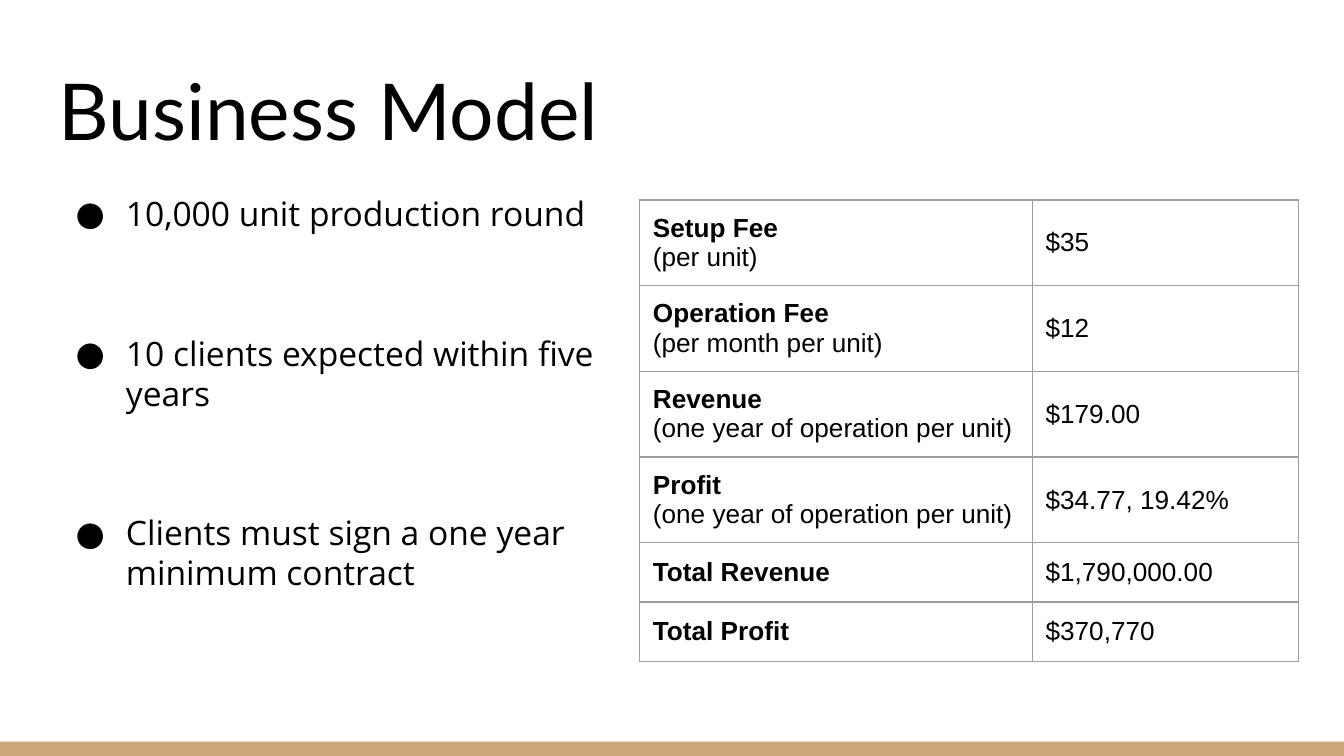
from lxml import etree
from pptx import Presentation
from pptx.dml.color import RGBColor
from pptx.enum.shapes import MSO_SHAPE
from pptx.enum.text import MSO_ANCHOR, MSO_AUTO_SIZE, PP_ALIGN
from pptx.oxml.ns import qn
from pptx.util import Cm, Pt

RECTANGLE = MSO_SHAPE.RECTANGLE
BOTTOM, MIDDLE, TOP = MSO_ANCHOR.BOTTOM, MSO_ANCHOR.MIDDLE, MSO_ANCHOR.TOP
NO_FIT = MSO_AUTO_SIZE.NONE
LEFT = PP_ALIGN.LEFT

BLACK = RGBColor(0x00, 0x00, 0x00)
WHITE = RGBColor(0xFF, 0xFF, 0xFF)
TAN = RGBColor(0xCC, 0xA6, 0x77)
GREY = RGBColor(0x9E, 0x9E, 0x9E)

SLIDE_WIDTH, SLIDE_HEIGHT = Cm(25.4), Cm(14.29)
BAR_HEIGHT = Cm(0.27)
INSET = Cm(0.25)
COLUMN_WIDTHS = Cm(7.42), Cm(5.03)
LINE_HEIGHT = Pt(21.4)
BULLET_GAP = Pt(53.5)

POINTS = [
    "10,000 unit production round",
    "10 clients expected within five years",
    "Clients must sign a one year minimum contract",
]
FIGURES = [
    (["Setup Fee", "(per unit)"], "$35"),
    (["Operation Fee", "(per month per unit)"], "$12"),
    (["Revenue", "(one year of operation per unit)"], "$179.00"),
    (["Profit", "(one year of operation per unit)"], "$34.77, 19.42%"),
    (["Total Revenue"], "$1,790,000.00"),
    (["Total Profit"], "$370,770"),
]


def add_span(para, text, font_name, size, bold=False):
    span = para.add_run()
    span.text = text
    font = span.font
    font.name, font.size, font.bold = font_name, Pt(size), bold
    font.color.rgb = BLACK


def place(box, left, top, width, height, anchor):
    """Move a placeholder and set up its text frame."""
    box.left, box.top, box.width, box.height = left, top, width, height
    frame = box.text_frame
    frame.word_wrap = True
    frame.auto_size = NO_FIT
    frame.vertical_anchor = anchor
    frame.margin_left = frame.margin_right = INSET
    frame.margin_top = frame.margin_bottom = INSET
    return frame


def add_bar(page):
    bar = page.shapes.add_shape(
        RECTANGLE, 0, SLIDE_HEIGHT - BAR_HEIGHT, SLIDE_WIDTH, BAR_HEIGHT)
    bar.shadow.inherit = False
    bar.fill.solid()
    bar.fill.fore_color.rgb = TAN
    bar.line.fill.background()


def fill_title(page):
    frame = place(page.shapes.title, Cm(0.86), Cm(0.89), Cm(23.67), Cm(2.31), BOTTOM)
    para = frame.paragraphs[0]
    para.alignment = LEFT
    add_span(para, "Business Model", "Lato", 42)


def set_bullet(para):
    properties = para._p.get_or_add_pPr()
    properties.set("marL", str(Cm(1.27)))
    properties.set("indent", str(-Cm(0.95)))
    color = etree.SubElement(properties, qn("a:buClr"))
    etree.SubElement(color, qn("a:srgbClr"), val=str(BLACK))
    etree.SubElement(properties, qn("a:buFont"), typeface="Open Sans")
    etree.SubElement(properties, qn("a:buChar"), char="●")


def fill_points(page):
    frame = place(page.placeholders[1], Cm(0.86), Cm(3.4), Cm(11.23), Cm(9.32), TOP)
    for index, text in enumerate(POINTS):
        para = frame.add_paragraph() if index else frame.paragraphs[0]
        set_bullet(para)
        para.alignment = LEFT
        para.line_spacing = LINE_HEIGHT
        para.space_before = BULLET_GAP if index else Pt(0)
        add_span(para, text, "Open Sans", 18)


def set_borders(cell):
    properties = cell._tc.get_or_add_tcPr()
    for position, side in enumerate(("a:lnL", "a:lnR", "a:lnT", "a:lnB")):
        line = etree.Element(qn(side), w=str(Pt(0.75)))
        fill = etree.SubElement(line, qn("a:solidFill"))
        etree.SubElement(fill, qn("a:srgbClr"), val=str(GREY))
        properties.insert(position, line)


def fill_cell(cell, lines, bold_first=False):
    cell.fill.solid()
    cell.fill.fore_color.rgb = WHITE
    cell.vertical_anchor = MIDDLE
    cell.margin_left = cell.margin_right = INSET
    cell.margin_top = cell.margin_bottom = INSET
    set_borders(cell)
    frame = cell.text_frame
    for index, text in enumerate(lines):
        para = frame.add_paragraph() if index else frame.paragraphs[0]
        add_span(para, text, "Arial", 14, bold_first and index == 0)


def add_figures(page):
    heights = [Cm(1.62) if len(label) > 1 else Cm(1.12) for label, _ in FIGURES]
    table = page.shapes.add_table(
        len(FIGURES), len(COLUMN_WIDTHS), Cm(12.09), Cm(3.78),
        sum(COLUMN_WIDTHS), sum(heights)).table
    table.first_row = table.horz_banding = False
    for column, width in zip(table.columns, COLUMN_WIDTHS):
        column.width = width
    for row, height, (label, value) in zip(table.rows, heights, FIGURES):
        row.height = height
        fill_cell(row.cells[0], label, bold_first=True)
        fill_cell(row.cells[1], [value])


def main():
    deck = Presentation()
    deck.slide_width, deck.slide_height = SLIDE_WIDTH, SLIDE_HEIGHT
    page = deck.slides.add_slide(deck.slide_layouts[1])
    add_bar(page)
    fill_title(page)
    fill_points(page)
    add_figures(page)
    deck.save("out.pptx")


if __name__ == "__main__":
    main()
